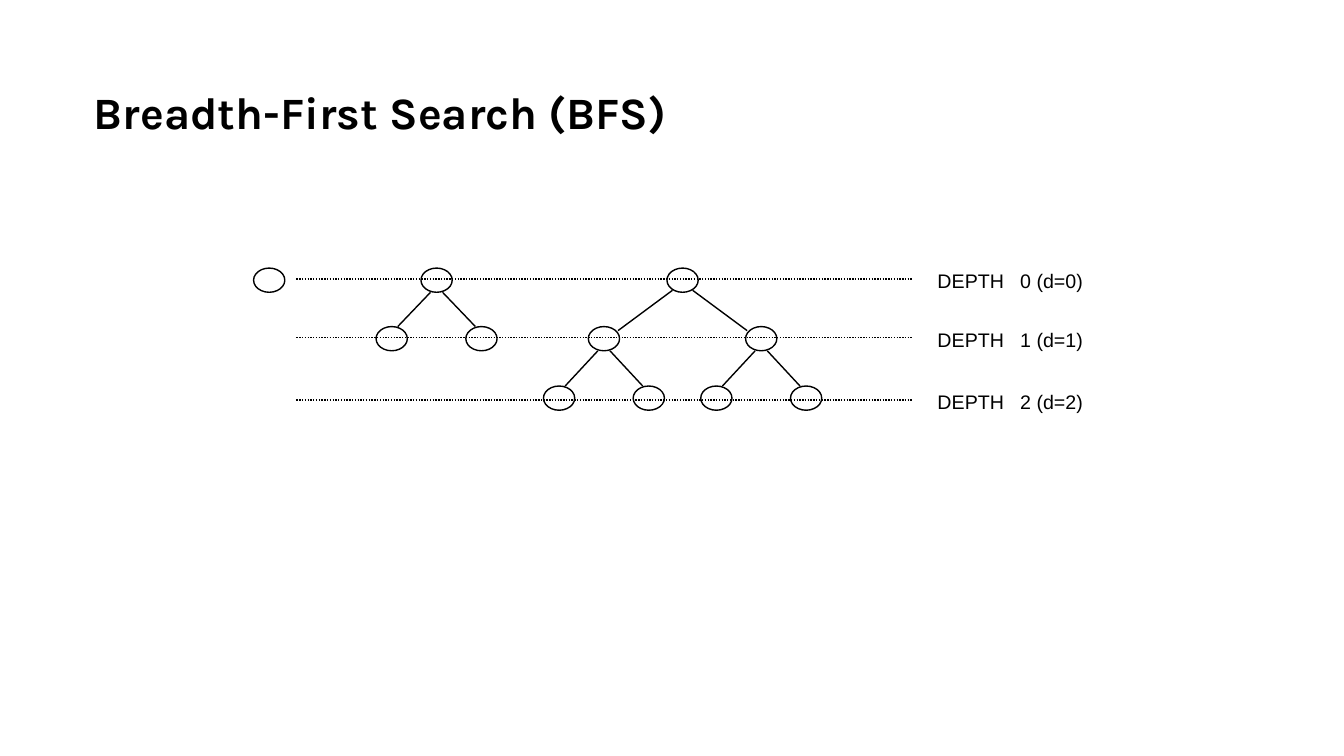
"""Build the breadth-first search slide: three growing trees on depth lines."""
from lxml import etree
from pptx import Presentation, util as u
from pptx.dml.color import RGBColor
from pptx.enum import dml, shapes, text
from pptx.oxml.ns import qn

TITLE = "Breadth-First Search (BFS)"
COLORS = {"ink": "000000"}
TREES = [(2.67, 0), (4.33, 1), (6.77, 2)]
ROWS = [2.78, 3.36, 3.95]
LINES = [2.77, 3.35, 3.97]
LABELS = [2.62, 3.2, 3.82]
NODE = (0.31, 0.24)
SPREAD = {1: 0.445, 2: 0.78}
TRIM = {1: ((0.06, 0.12), (0.06, 0.12)), 2: ((0.1, 0.1), (0.14, 0.08))}
INK = RGBColor.from_string(COLORS["ink"])


def style(para, name, size, bold=False):
    font = para.font
    font.name, font.size, font.bold = name, u.Pt(size), bold
    font.color.rgb = INK


def link(slide, x1, y1, x2, y2, dash=None):
    line = slide.shapes.add_connector(
        shapes.MSO_CONNECTOR.STRAIGHT, *map(u.Inches, (x1, y1, x2, y2)))
    line.line.color.rgb = INK
    line.line.width = u.Pt(1)
    if dash:
        line.line.dash_style = dash
    etree.SubElement(line._element.spPr, qn("a:effectLst"))


def grow(slide, x, height, level=0):
    y = ROWS[level]
    wide, high = NODE
    node = slide.shapes.add_shape(
        shapes.MSO_SHAPE.OVAL,
        *map(u.Inches, (x - wide / 2, y - high / 2, wide, high)))
    node.shadow.inherit = False
    node.fill.background()
    node.line.color.rgb = INK
    node.line.width = u.Pt(1)
    if not height:
        return
    (dx1, dy1), (dx2, dy2) = TRIM[height]
    for side in (-1, 1):
        child = x + side * SPREAD[height]
        link(slide, x + side * dx1, y + dy1,
             child - side * dx2, ROWS[level + 1] - dy2)
        grow(slide, child, height - 1, level + 1)


def label(slide, depth, top):
    box = slide.shapes.add_textbox(*map(u.Inches, (9.2, top, 1.66, 0.34)))
    frame = box.text_frame
    frame.word_wrap = False
    para = frame.paragraphs[0]
    para.text = f"DEPTH\t{depth} (d={depth})"
    para.alignment = text.PP_ALIGN.LEFT
    tabs = etree.SubElement(para._p.get_or_add_pPr(), qn("a:tabLst"))
    etree.SubElement(tabs, qn("a:tab"), pos=str(u.Inches(0.82)), algn="l")
    style(para, "Arial", 14)


def main():
    deck = Presentation()
    deck.slide_width, deck.slide_height = u.Inches(13.33), u.Inches(7.5)
    slide = deck.slides.add_slide(deck.slide_layouts[5])
    title = slide.shapes.title
    title.left, title.top = u.Inches(0.83), u.Inches(0.48)
    title.width, title.height = u.Inches(11.33), u.Inches(1.25)
    frame = title.text_frame
    frame.text = TITLE
    frame.vertical_anchor = text.MSO_ANCHOR.MIDDLE
    para = frame.paragraphs[0]
    para.alignment = text.PP_ALIGN.LEFT
    style(para, "Karla", 32, True)
    for x, height in TREES:
        grow(slide, x, height)
    for depth, (y, top) in enumerate(zip(LINES, LABELS)):
        label(slide, depth, top)
        link(slide, 2.94, y, 9.05, y, dml.MSO_LINE.ROUND_DOT)
    deck.save("out.pptx")


if __name__ == "__main__":
    main()
